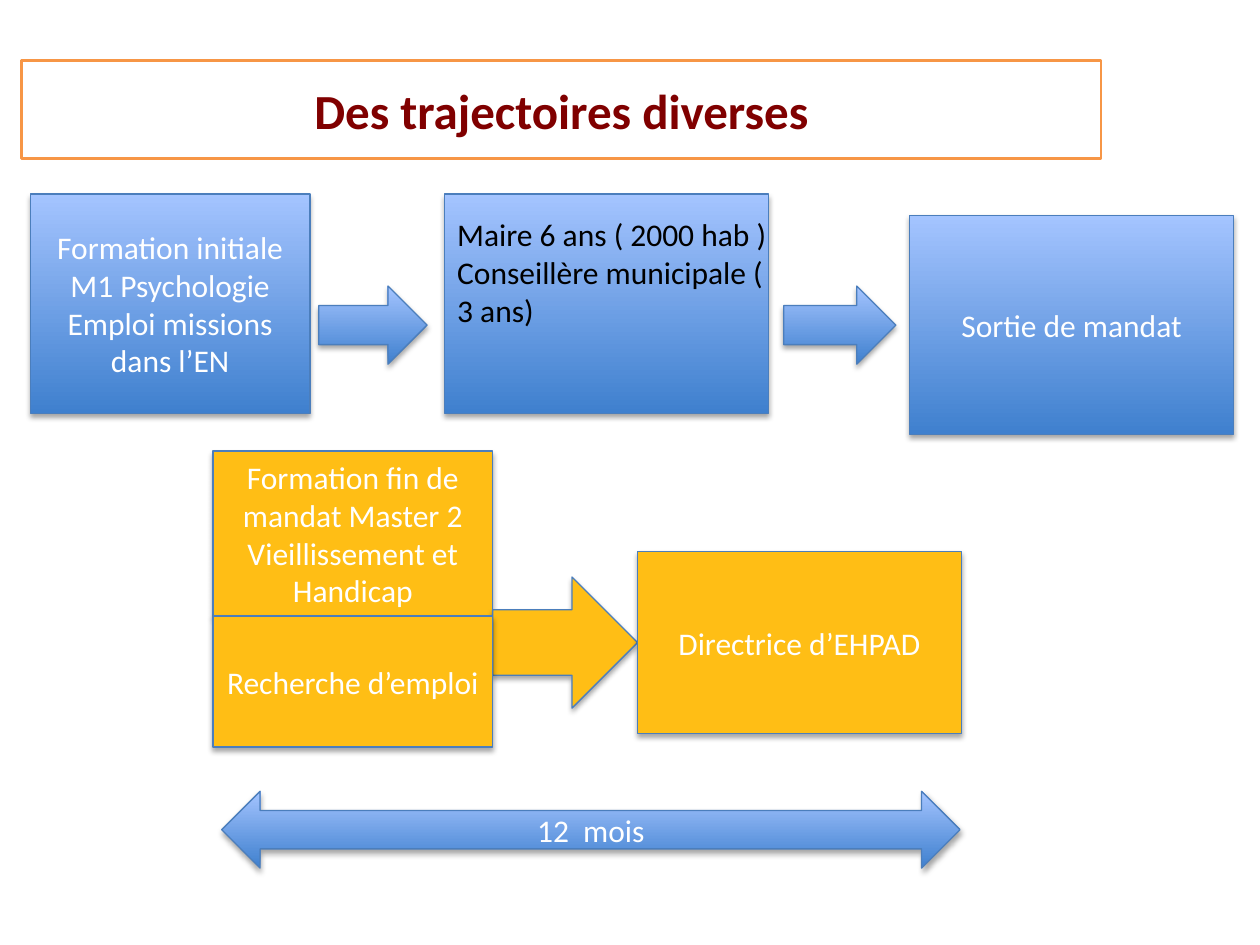
from lxml import etree
from pptx import Presentation
from pptx import util as u
from pptx.dml.color import RGBColor
from pptx.enum import shapes, text
from pptx.oxml import ns

THEME = dict(font="Calibri", title_size=28, body_size=18,
             title="800000", title_line="F79646", light="FFFFFF", dark="000000",
             line="4B7EBC", amber="FFBE15", blue=("3F80CE", "A4C4FF"))

# Grid: 100 columns by 75 rows over the slide
COLS, ROWS = 100, 75
SIDE_W, MAIN_W, BOX_H = 22.2, 25.7, 17.4
TOP, ARROW_TOP, ARROW_H = 15.4, 22.7, 6.2
STACK_X, STACK_TOP, STACK_H, JOB_H = 16.9, 35.8, 13.1, 10.4
GOAL_X = 50.6

TITLE = "Des trajectoires diverses"
MANDATE = ["Maire 6 ans ( 2000 hab )", "Conseillère municipale ( 3 ans)"]

# kind, fill, (column, row, columns wide, rows high), paragraphs
CAREER = [
    ("RECTANGLE", "blue", (2.4, TOP, SIDE_W, BOX_H),
     ["Formation initiale M1 Psychologie", "Emploi missions dans l’EN"]),
    ("RIGHT_ARROW", "blue", (25.3, ARROW_TOP, 8.6, ARROW_H), []),
    ("RECTANGLE", "blue", (35.3, TOP, MAIN_W, BOX_H), []),
    ("RIGHT_ARROW", "blue", (62.2, ARROW_TOP, 8.9, ARROW_H), []),
    ("RECTANGLE", "blue", (72.2, TOP + 1.7, MAIN_W, BOX_H), ["Sortie de mandat"]),
]
TRANSITION = [
    ("RECTANGLE", "amber", (STACK_X, STACK_TOP, SIDE_W, STACK_H),
     ["Formation fin de mandat Master 2 Vieillissement et Handicap"]),
    ("RIGHT_ARROW", "amber",
     (STACK_X + SIDE_W, 45.8, GOAL_X - STACK_X - SIDE_W, JOB_H), []),
    ("RECTANGLE", "amber", (STACK_X, STACK_TOP + STACK_H, SIDE_W, JOB_H),
     ["Recherche d’emploi"]),
    ("RECTANGLE", "amber", (GOAL_X, 43.8, MAIN_W, 14.4), ["Directrice d’EHPAD"]),
    ("LEFT_RIGHT_ARROW", "blue", (17.6, 62.8, 58.6, 6.1), ["12  mois"]),
]

prs = Presentation()
prs.slide_width, prs.slide_height = u.Inches(10), u.Inches(7.5)
s = prs.slides.add_slide(prs.slide_layouts[6])


def rgb(name):
    return RGBColor.from_string(name)


def place(col, row, wide, high):
    cw, rh = prs.slide_width / COLS, prs.slide_height / ROWS
    return [round(v) for v in (col * cw, row * rh, wide * cw, high * rh)]


def write(sp, paragraphs, size=THEME["body_size"], color=THEME["light"], bold=False,
          align=text.PP_ALIGN.CENTER, anchor=text.MSO_ANCHOR.MIDDLE):
    tf = sp.text_frame
    tf.word_wrap = True
    tf.vertical_anchor = anchor
    for i, words in enumerate(paragraphs):
        p = tf.paragraphs[0] if i == 0 else tf.add_paragraph()
        p.alignment = align
        r = p.add_run()
        r.text = words
        r.font.name, r.font.size, r.font.bold = THEME["font"], u.Pt(size), bold
        r.font.color.rgb = rgb(color)


def add_shadow(sp):
    effects = sp._element.spPr.find(ns.qn("a:effectLst"))
    shadow = etree.SubElement(effects, ns.qn("a:outerShdw"), blurRad=str(u.Pt(3.1)),
                              dist=str(u.Pt(1.8)), dir="5400000", rotWithShape="0")
    color = etree.SubElement(shadow, ns.qn("a:srgbClr"), val=THEME["dark"])
    etree.SubElement(color, ns.qn("a:alpha"), val="35000")


def add_block(kind, fill, cell, line=THEME["line"], width=0.75):
    sp = s.shapes.add_shape(getattr(shapes.MSO_SHAPE, kind), *place(*cell))
    sp.shadow.inherit = False
    sp.line.color.rgb, sp.line.width = rgb(line), u.Pt(width)
    if fill is None:
        sp.fill.background()
        return sp
    if fill == "blue":
        sp.fill.gradient()
        sp.fill.gradient_angle = 90
        for stop, color, at in zip(sp.fill.gradient_stops, THEME["blue"], (0, 1)):
            stop.color.rgb, stop.position = rgb(color), at
    else:
        sp.fill.solid()
        sp.fill.fore_color.rgb = rgb(THEME[fill])
    add_shadow(sp)
    return sp


def add_steps(steps):
    for kind, fill, cell, paragraphs in steps:
        write(add_block(kind, fill, cell), paragraphs)


# Title
title = add_block("RECTANGLE", None, (1.7, 4.8, 85.7, 7.8), THEME["title_line"], 1.5)
write(title, [TITLE], size=THEME["title_size"], color=THEME["title"], bold=True)

# Career up to the end of the mandate
add_steps(CAREER)
write(s.shapes.add_textbox(*place(35.3, 16.6, 26.8, 10.1)), MANDATE, color=THEME["dark"],
      align=text.PP_ALIGN.LEFT, anchor=text.MSO_ANCHOR.TOP)

# Transition to the new job, with its duration
add_steps(TRANSITION)

prs.save("out.pptx")
